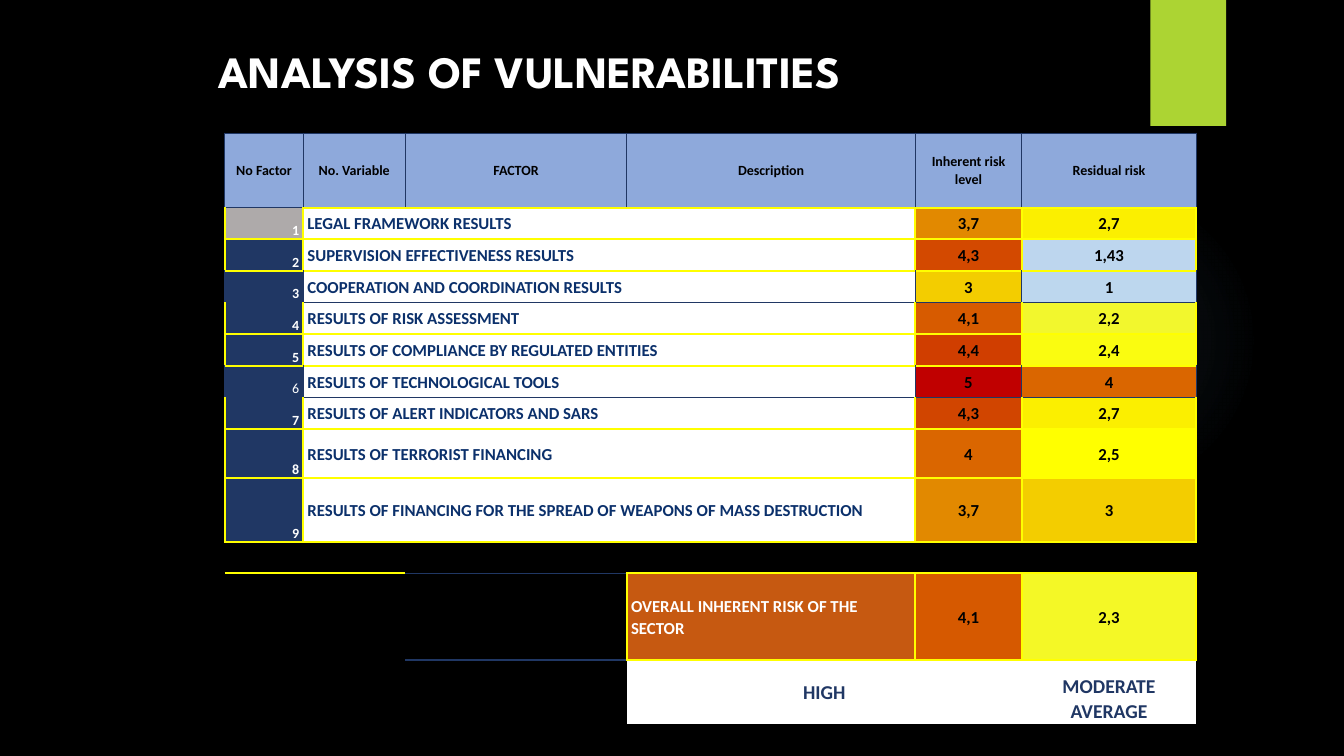
import pptx
import pptx.util
import pptx.dml.color
import pptx.enum.shapes
import pptx.enum.text
import pptx.oxml
import pptx.oxml.ns

Pt = pptx.util.Pt
RGBColor = pptx.dml.color.RGBColor
PP_ALIGN = pptx.enum.text.PP_ALIGN
MSO_ANCHOR = pptx.enum.text.MSO_ANCHOR
MSO_SHAPE = pptx.enum.shapes.MSO_SHAPE

BLACK = RGBColor(0x00, 0x00, 0x00)
WHITE = RGBColor(0xFF, 0xFF, 0xFF)
GREEN = RGBColor(0xAC, 0xD4, 0x33)
YELLOW = RGBColor(0xFF, 0xFF, 0x00)
NAVY = RGBColor(0x20, 0x37, 0x64)
TEXT_BLUE = RGBColor(0x0B, 0x30, 0x6B)
HEADER_BLUE = RGBColor(0x8E, 0xA9, 0xDB)
GRAY = RGBColor(0xAE, 0xAA, 0xAA)
PALE_BLUE = RGBColor(0xBD, 0xD6, 0xEE)
PALE_SKY = RGBColor(0xBD, 0xD7, 0xEE)
AMBER = RGBColor(0xE2, 0x89, 0x00)
GOLD = RGBColor(0xF3, 0xCD, 0x00)
BRIGHT_YELLOW = RGBColor(0xFB, 0xEF, 0x00)
LIME_YELLOW = RGBColor(0xF2, 0xF7, 0x2D)
LEMON = RGBColor(0xFA, 0xFC, 0x10)
OVERALL_YELLOW = RGBColor(0xF4, 0xF8, 0x26)
ORANGE = RGBColor(0xDA, 0x66, 0x00)
DEEP_ORANGE = RGBColor(0xD7, 0x5B, 0x00)
OVERALL_ORANGE = RGBColor(0xD6, 0x59, 0x00)
RUST = RGBColor(0xC6, 0x59, 0x11)
RED_ORANGE = RGBColor(0xD3, 0x49, 0x00)
VERMILION = RGBColor(0xD1, 0x45, 0x00)
SCARLET = RGBColor(0xD0, 0x3E, 0x00)
RED = RGBColor(0xC0, 0x00, 0x00)

BORDERS = {"Y": (YELLOW, 1.5), "N": (NAVY, 1)}
NAMESPACE = pptx.oxml.ns.nsdecls("a")


def set_borders(cell, sides):
    properties = cell._tc.get_or_add_tcPr()
    for side, key in zip("LRTB", sides):
        if key in BORDERS:
            color, width = BORDERS[key]
            properties.append(pptx.oxml.parse_xml(
                f'<a:ln{side} {NAMESPACE} w="{Pt(width)}"><a:solidFill>'
                f'<a:srgbClr val="{color}"/></a:solidFill></a:ln{side}>'))


def fill_cell(cell, text, fill, color=BLACK, size=12, align=PP_ALIGN.CENTER,
              anchor=MSO_ANCHOR.MIDDLE, bold=True):
    cell.fill.solid()
    cell.fill.fore_color.rgb = fill
    cell.vertical_anchor = anchor
    cell.text = text
    paragraph = cell.text_frame.paragraphs[0]
    paragraph.alignment = align
    paragraph.line_spacing = 1.07
    paragraph.font.name = "Calibri"
    paragraph.font.size = Pt(size)
    paragraph.font.bold = bold
    paragraph.font.color.rgb = color


presentation = pptx.Presentation()
presentation.slide_width = Pt(960)
presentation.slide_height = Pt(540)
slide = presentation.slides.add_slide(presentation.slide_layouts[5])
slide.background.fill.solid()
slide.background.fill.fore_color.rgb = BLACK

glow = slide.shapes.add_shape(MSO_SHAPE.OVAL, Pt(677.5), Pt(131.8), Pt(221.8), Pt(221.8))
glow.shadow.inherit = False
glow.line.fill.background()
stops = "".join(
    f'<a:gs pos="{position}000"><a:srgbClr val="7AC4F0"><a:alpha val="{alpha}000"/></a:srgbClr></a:gs>'
    for position, alpha in ((0, 7), (36, 6), (69, 0)))
glow._element.spPr.insert(2, pptx.oxml.parse_xml(
    f'<a:gradFill {NAMESPACE}><a:gsLst>{stops}</a:gsLst><a:path path="circle">'
    '<a:fillToRect l="50000" t="50000" r="50000" b="50000"/></a:path></a:gradFill>'))

accent = slide.shapes.add_shape(MSO_SHAPE.RECTANGLE, Pt(821.8), Pt(0), Pt(54), Pt(90))
accent.shadow.inherit = False
accent.fill.solid()
accent.fill.fore_color.rgb = GREEN
accent.line.fill.background()

title = slide.shapes.title
title.left, title.top, title.width, title.height = Pt(149), Pt(27.4), Pt(668), Pt(46)
title.text = "ANALYSIS OF VULNERABILITIES"
title.text_frame.auto_size = pptx.enum.text.MSO_AUTO_SIZE.NONE
title.text_frame.vertical_anchor = MSO_ANCHOR.TOP
heading = title.text_frame.paragraphs[0]
heading.alignment = PP_ALIGN.LEFT
heading.font.name = "League Spartan"
heading.font.size = Pt(32)
heading.font.bold = True
heading.font.color.rgb = WHITE

column_widths = [56, 72.8, 158.4, 206, 76, 124.8]
row_heights = [53.2] + [22.6] * 7 + [35.2, 45.5, 22.3, 62, 45.8]
table = slide.shapes.add_table(
    len(row_heights), len(column_widths), Pt(160.6), Pt(95.2),
    Pt(sum(column_widths)), Pt(sum(row_heights))).table
table.first_row = False
table.horz_banding = False
table._tbl.tblPr.find(pptx.oxml.ns.qn("a:tableStyleId")).text = "{2D5ABB26-0587-4C30-8999-92F81FD0307C}"
for column, width in zip(table.columns, column_widths):
    column.width = Pt(width)
for row, height in zip(table.rows, row_heights):
    row.height = Pt(height)
for cell in table.iter_cells():
    cell.margin_left = cell.margin_right = Pt(3)
    cell.margin_top = cell.margin_bottom = 0
    cell.text_frame.paragraphs[0].font.size = Pt(10)

headers = ["No Factor", "No. Variable", "FACTOR", "Description", "Inherent risk level", "Residual risk"]
for index, header in enumerate(headers):
    cell = table.cell(0, index)
    set_borders(cell, "NNNY" if index else "NNNN")
    fill_cell(cell, header, HEADER_BLUE, size=10)

factors = [
    ("LEGAL FRAMEWORK RESULTS", "3,7", AMBER, "2,7", BRIGHT_YELLOW),
    ("SUPERVISION EFFECTIVENESS RESULTS", "4,3", RED_ORANGE, "1,43", PALE_BLUE),
    ("COOPERATION AND COORDINATION RESULTS", "3", GOLD, "1", PALE_SKY),
    ("RESULTS OF RISK ASSESSMENT", "4,1", DEEP_ORANGE, "2,2", LIME_YELLOW),
    ("RESULTS OF COMPLIANCE BY REGULATED ENTITIES", "4,4", SCARLET, "2,4", LEMON),
    ("RESULTS OF TECHNOLOGICAL TOOLS", "5", RED, "4", ORANGE),
    ("RESULTS OF ALERT INDICATORS AND SARS", "4,3", VERMILION, "2,7", BRIGHT_YELLOW),
    ("RESULTS OF TERRORIST FINANCING", "4", ORANGE, "2,5", YELLOW),
    ("RESULTS OF FINANCING FOR THE SPREAD OF WEAPONS OF MASS DESTRUCTION",
     "3,7", AMBER, "3", GOLD),
]
navy_rows = (3, 6)
for number, (factor, inherent, inherent_fill, residual, residual_fill) in enumerate(factors, 1):
    if number in navy_rows:
        sides = "NNYN"
    elif number - 1 in navy_rows:
        sides = "YYNY"
    else:
        sides = "YYYY"
    for index in range(len(column_widths)):
        set_borders(table.cell(number, index), "YYNY" if (number, index) == (1, 0) else sides)
    table.cell(number, 1).merge(table.cell(number, 3))
    fill_cell(table.cell(number, 0), str(number), GRAY if number == 1 else NAVY, WHITE, 10,
              PP_ALIGN.RIGHT, MSO_ANCHOR.BOTTOM, bold=number != 6)
    fill_cell(table.cell(number, 1), factor, WHITE, TEXT_BLUE, align=PP_ALIGN.LEFT)
    fill_cell(table.cell(number, 4), inherent, inherent_fill)
    fill_cell(table.cell(number, 5), residual, residual_fill)

for index, sides in enumerate(["--Y-", "--Y-", "--YN", "--YY", "--YY", "--YY"]):
    set_borders(table.cell(10, index), sides)
set_borders(table.cell(11, 2), "-YN-")
for index in (3, 4, 5):
    set_borders(table.cell(11, index), "YYYY")
    set_borders(table.cell(12, index), "--Y-")
fill_cell(table.cell(11, 3), "OVERALL INHERENT RISK OF THE SECTOR", RUST, WHITE, align=PP_ALIGN.LEFT)
fill_cell(table.cell(11, 4), "4,1", OVERALL_ORANGE)
fill_cell(table.cell(11, 5), "2,3", OVERALL_YELLOW)
table.cell(12, 3).merge(table.cell(12, 4))
fill_cell(table.cell(12, 3), "HIGH", WHITE, NAVY, 14)
fill_cell(table.cell(12, 5), "MODERATE AVERAGE", WHITE, NAVY, 14, anchor=MSO_ANCHOR.BOTTOM)

presentation.save("out.pptx")
